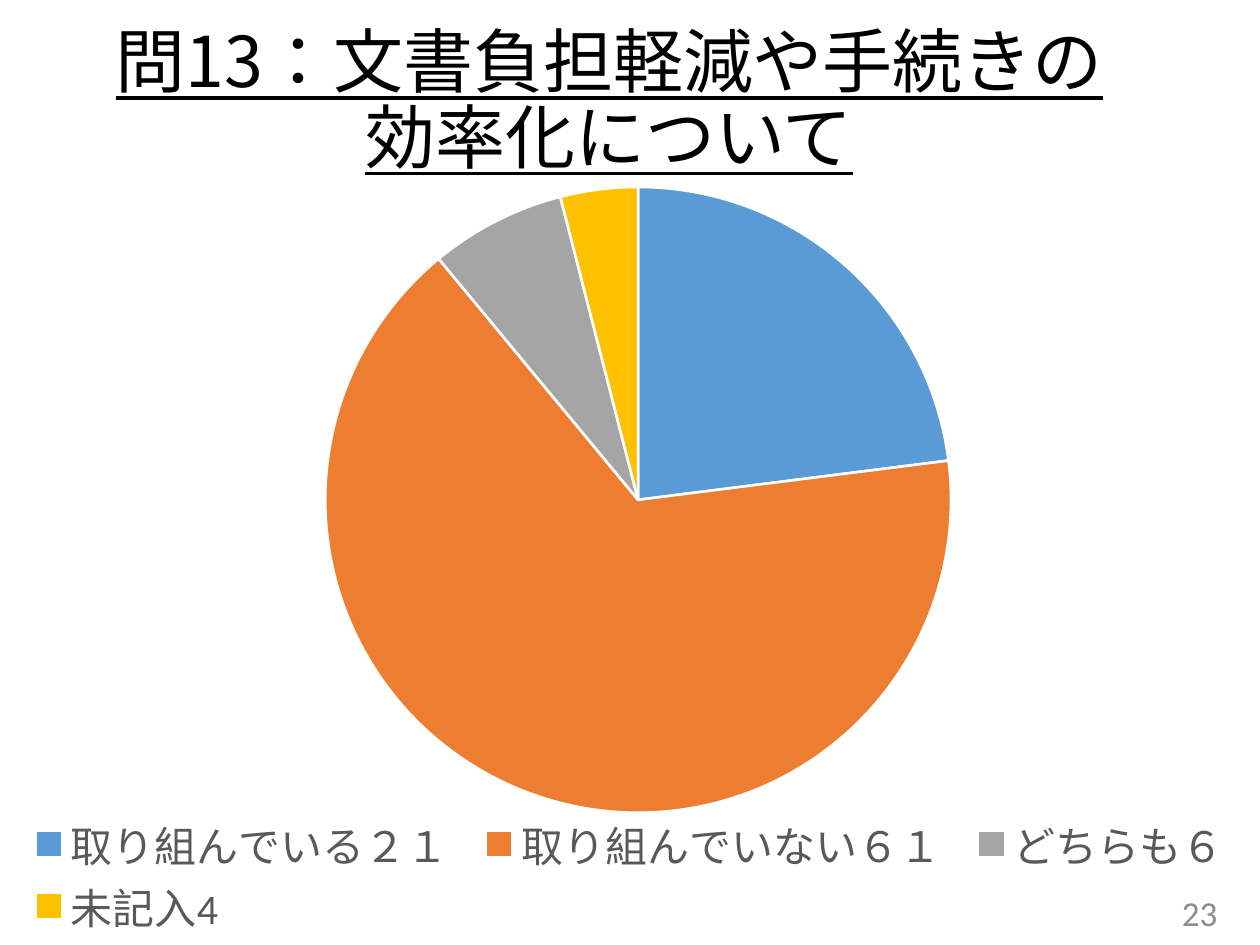
from lxml import etree
from pptx import Presentation
from pptx.chart.data import CategoryChartData
from pptx.dml.color import RGBColor
from pptx.enum.chart import XL_CHART_TYPE, XL_LEGEND_POSITION
from pptx.enum.lang import MSO_LANGUAGE_ID
from pptx.enum.text import MSO_ANCHOR, PP_ALIGN
from pptx.oxml import parse_xml
from pptx.oxml.ns import nsdecls, qn
from pptx.util import Inches, Pt

PIE = XL_CHART_TYPE.PIE
BOTTOM = XL_LEGEND_POSITION.BOTTOM
MIDDLE = MSO_ANCHOR.MIDDLE
CENTER, RIGHT = PP_ALIGN.CENTER, PP_ALIGN.RIGHT
JA = MSO_LANGUAGE_ID.JAPANESE
LATIN, JAPANESE = "Calibri", "Noto Sans CJK JP"
COLORS = {"title": "000000", "number": "8C8C8C", "legend": "595959", "border": "FFFFFF"}
ANSWERS = [
    ("取り組んでいる２１", 23, "5B9BD5"),
    ("取り組んでいない６１", 66, "ED7D31"),
    ("どちらも６", 7, "A5A5A5"),
    ("未記入4", 4, "FFC000"),
]
PLOT_AREA = {"x": 0.256, "y": 0.025, "w": 0.501, "h": 0.805}
LEGEND_AREA = {"x": 0.01, "y": 0.83, "w": 0.98, "h": 0.16}


def write_text(frame, text, *, size, color, font, align, underline=False, spacing=1.0):
    """Fill a text frame with one formatted paragraph, breaking lines at newlines."""
    frame.word_wrap = True
    frame.vertical_anchor = MIDDLE
    paragraph = frame.paragraphs[0]
    paragraph.alignment = align
    paragraph.line_spacing = spacing
    for index, line in enumerate(text.split("\n")):
        if index:
            paragraph.add_line_break()
        run = paragraph.add_run()
        run.text = line
        run.font.size = Pt(size)
        run.font.name = font
        run.font.underline = underline
        run.font.language_id = JA
        run.font.color.rgb = RGBColor.from_string(color)
        etree.SubElement(run.font._element, qn("a:ea"), typeface=font)


def set_layout(parent, position, area, target=""):
    """Give a chart part a manual layout, in fractions of the chart."""
    for automatic in parent.findall(qn("c:layout")):
        parent.remove(automatic)
    fractions = "".join(f'<c:{key} val="{value}"/>' for key, value in area.items())
    parent.insert(position, parse_xml(
        f'<c:layout {nsdecls("c")}><c:manualLayout>{target}'
        f'<c:xMode val="edge"/><c:yMode val="edge"/>{fractions}</c:manualLayout></c:layout>'))


def place_title(slide, left, top, width, height):
    """Move the title placeholder into its box and write the question."""
    title = slide.shapes.title
    title.left, title.top, title.width, title.height = left, top, width, height
    write_text(title.text_frame, "問13：文書負担軽減や手続きの\n効率化について", size=40,
               color=COLORS["title"], font=JAPANESE, align=CENTER, underline=True, spacing=0.9)


def place_answer_pie(slide, left, top, width, height):
    """Draw the pie of answers with its legend below."""
    answers = CategoryChartData()
    answers.categories = [label for label, _, _ in ANSWERS]
    answers.add_series("Series 1", [value for _, value, _ in ANSWERS])
    pie = slide.shapes.add_chart(PIE, left, top, width, height, answers).chart
    pie.has_title = False
    pie.font.name = LATIN
    pie.font.size = Pt(10)
    pie.has_legend = True
    pie.legend.position = BOTTOM
    pie.legend.include_in_layout = False
    pie.legend.font.size = Pt(24)
    pie.legend.font.name = LATIN
    pie.legend.font.color.rgb = RGBColor.from_string(COLORS["legend"])

    plot = pie.plots[0]
    plot.vary_by_categories = True
    for index, (_, _, color) in enumerate(ANSWERS):
        slice_format = plot.series[0].points[index].format
        slice_format.fill.solid()
        slice_format.fill.fore_color.rgb = RGBColor.from_string(color)
        slice_format.line.color.rgb = RGBColor.from_string(COLORS["border"])
        slice_format.line.width = Pt(1.5)

    chart = pie._chartSpace.chart
    set_layout(chart.plotArea, 0, PLOT_AREA, '<c:layoutTarget val="inner"/>')
    set_layout(chart.find(qn("c:legend")), 1, LEGEND_AREA)


def place_page_number(slide, left, top, width, height):
    """Write the page number in the lower right corner."""
    number = slide.shapes.add_textbox(left, top, width, height)
    write_text(number.text_frame, "23", size=20, color=COLORS["number"], font=LATIN, align=RIGHT)


def main():
    """Build the survey slide and save it."""
    deck = Presentation()
    deck.slide_width, deck.slide_height = Inches(10), Inches(7.5)
    slide = deck.slides.add_slide(deck.slide_layouts[5])
    place_title(slide, Inches(0.09), Inches(0.14), Inches(9.49), Inches(1.35))
    place_answer_pie(slide, Inches(0), Inches(1.33), Inches(10), Inches(6.17))
    place_page_number(slide, Inches(7.51), Inches(7.04), Inches(2.25), Inches(0.4))
    deck.save("out.pptx")


if __name__ == "__main__":
    main()
